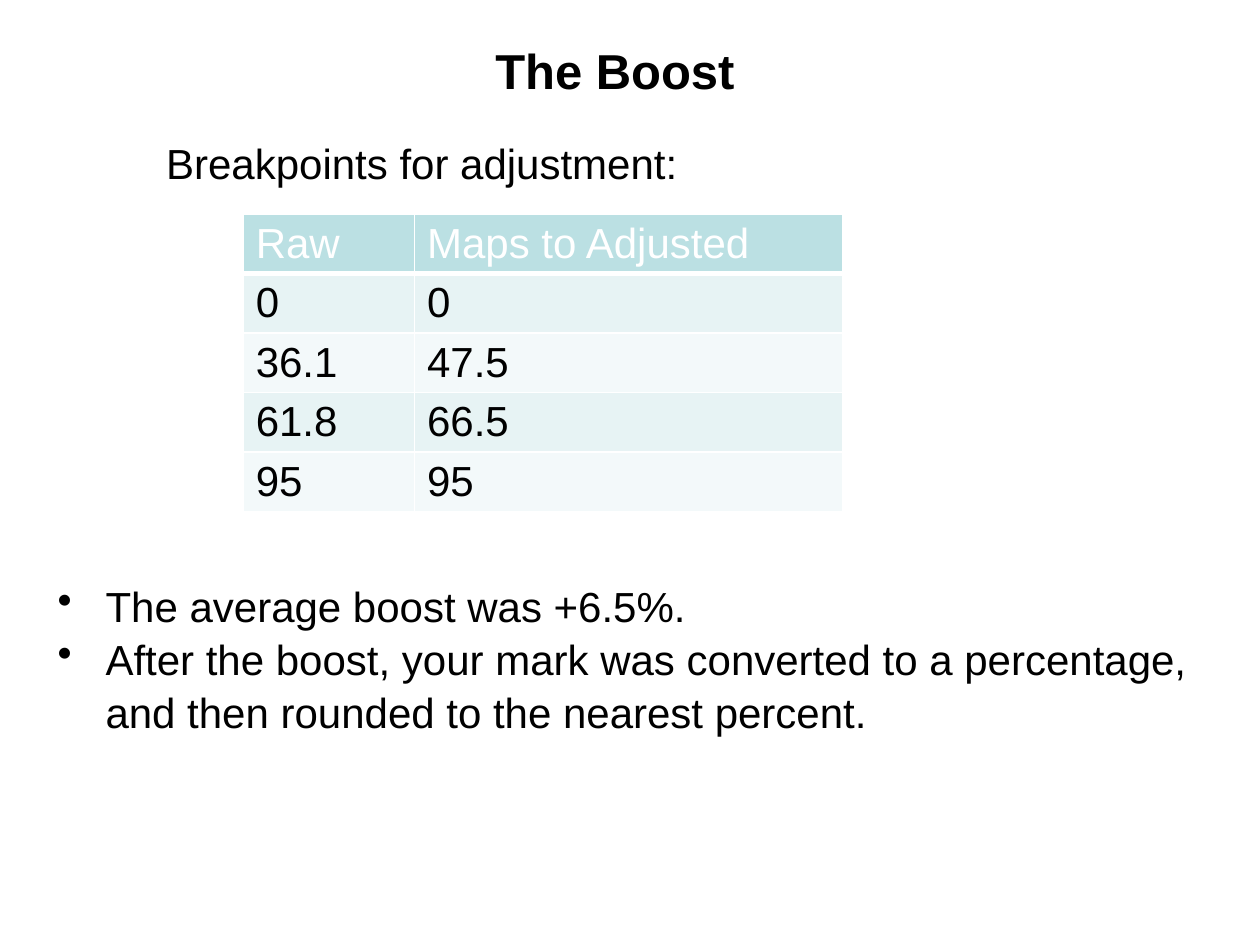
from lxml import etree
from pptx import Presentation
from pptx.dml.color import RGBColor
from pptx.enum.text import MSO_ANCHOR, PP_ALIGN
from pptx.oxml.ns import qn
from pptx.util import Inches, Pt

CENTER = PP_ALIGN.CENTER
BOTTOM = MSO_ANCHOR.BOTTOM
BLACK = RGBColor(0x00, 0x00, 0x00)
WHITE = RGBColor(0xFF, 0xFF, 0xFF)
TEAL = RGBColor(0xBB, 0xE0, 0xE3)
PALE = RGBColor(0xE7, 0xF3, 0xF4)
MIST = RGBColor(0xF3, 0xF9, 0xFA)

ROWS = [
    ("Raw", "Maps to Adjusted"),
    ("0", "0"),
    ("36.1", "47.5"),
    ("61.8", "66.5"),
    ("95", "95"),
]
NOTES = [
    "The average boost was +6.5%.",
    "After the boost, your mark was converted to a percentage, "
    "and then rounded to the nearest percent.",
]


class Deck:
    face = "Arial"
    size = 24
    pitch = 1.05

    def __init__(self):
        self.prs = Presentation()
        self.prs.slide_width = Inches(10)
        self.prs.slide_height = Inches(7.5)
        self.slide = self.prs.slides.add_slide(self.prs.slide_layouts[5])

    def font(self, para, size=size, color=BLACK, bold=False):
        para.font.name = self.face
        para.font.size = Pt(size)
        para.font.color.rgb = color
        para.font.bold = bold

    def title(self, text, *box):
        shape = self.slide.shapes.title
        shape.left, shape.top, shape.width, shape.height = map(Inches, box)
        frame = shape.text_frame
        frame.text = text
        frame.vertical_anchor = BOTTOM
        frame.margin_bottom = 0
        para = frame.paragraphs[0]
        para.alignment = CENTER
        self.font(para, 28, bold=True)

    def text(self, lines, *box, bullet=False):
        frame = self.slide.shapes.add_textbox(*map(Inches, box)).text_frame
        frame.word_wrap = True
        frame.text = "\n".join(lines)
        for para in frame.paragraphs:
            para.line_spacing = self.pitch
            self.font(para)
            if bullet:
                self.bullet(para)

    def bullet(self, para):
        props = para._p.get_or_add_pPr()
        props.set("marL", str(Inches(0.38)))
        props.set("indent", str(-Inches(0.38)))
        mark = etree.Element(qn("a:buChar"), char="•")
        props.find(qn("a:defRPr")).addprevious(mark)

    def edge(self, cell, side, width):
        line = etree.Element(qn("a:ln" + side), w=str(Pt(width)))
        fill = etree.SubElement(line, qn("a:solidFill"))
        etree.SubElement(fill, qn("a:srgbClr"), val=str(WHITE))
        return line

    def cell(self, cell, text, fill, color, base):
        cell.text = text
        self.font(cell.text_frame.paragraphs[0], color=color)
        cell.fill.solid()
        cell.fill.fore_color.rgb = fill
        props = cell._tc.get_or_add_tcPr()
        widths = {"L": 1, "R": 1, "T": 1, "B": base}
        for spot, (side, width) in enumerate(widths.items()):
            props.insert(spot, self.edge(cell, side, width))

    def table(self, rows, cols, left, top, step):
        grid = self.slide.shapes.add_table(
            len(rows), len(cols), Inches(left), Inches(top),
            Inches(sum(cols)), Inches(step * len(rows))).table
        for col, width in zip(grid.columns, cols):
            col.width = Inches(width)
        for r, row in enumerate(rows):
            grid.rows[r].height = Inches(step)
            fill = TEAL if r == 0 else (MIST, PALE)[r % 2]
            color = BLACK if r else WHITE
            for c, text in enumerate(row):
                self.cell(grid.cell(r, c), text, fill, color, 1 if r else 3)


def main():
    deck = Deck()
    deck.title("The Boost", 0.88, 0.25, 8, 0.54)
    deck.table(ROWS, (1.36, 3.4), 1.93, 1.7, 0.47)
    deck.text(["Breakpoints for adjustment:"], 1.22, 1.02, 8.48, 0.5)
    deck.text(NOTES, 0.36, 4.54, 9.37, 1.31, bullet=True)
    deck.prs.save("out.pptx")


if __name__ == "__main__":
    main()
